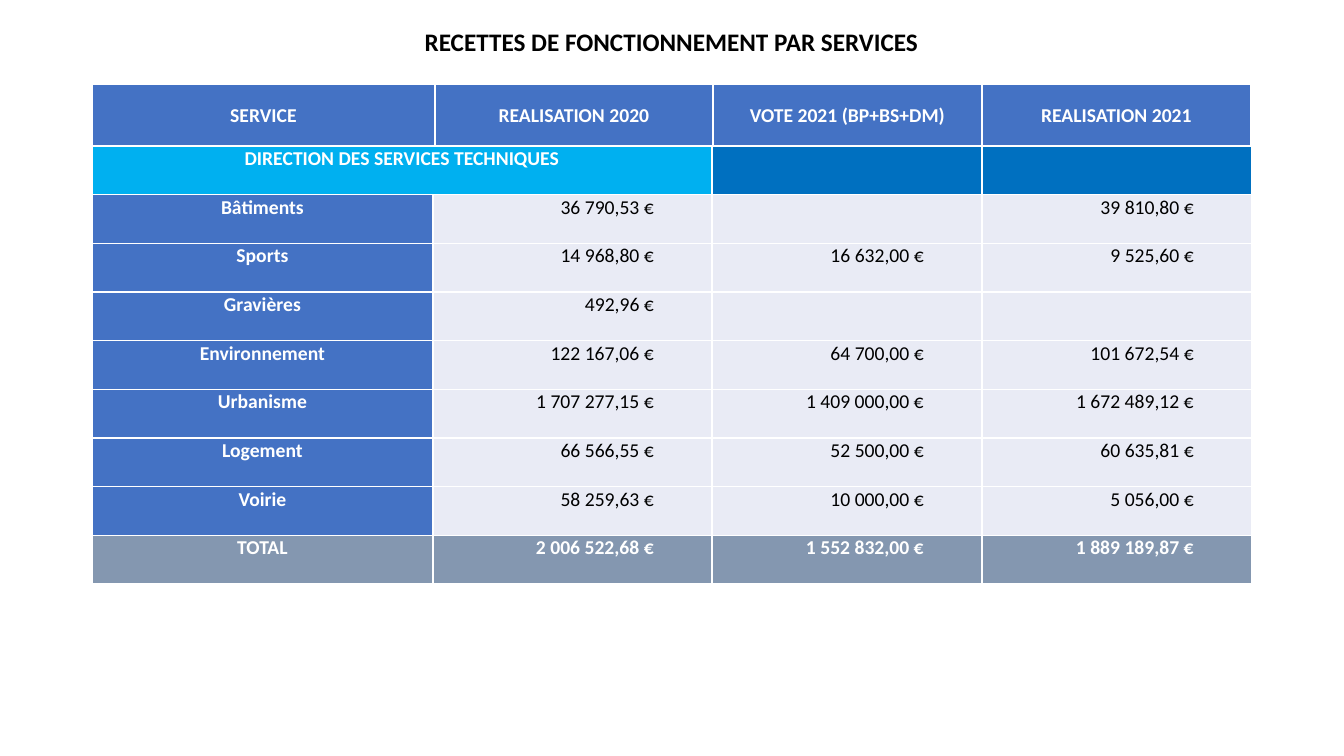
from lxml.etree import SubElement
from pptx import Presentation
from pptx.dml.color import RGBColor
from pptx.enum.text import MSO_ANCHOR as Anchor, PP_ALIGN as Align
from pptx.oxml.ns import qn
from pptx.util import Emu, Pt

EMU_PER_PX = 12192000 / 1344
COLORS = {
    "white": "FFFFFF",
    "black": "000000",
    "service": "4472C4",
    "direction": "00B0F0",
    "direction_blank": "0070C0",
    "amount": "E9EBF5",
    "total": "8497B0",
}
HEADINGS = ["SERVICE", "REALISATION 2020", "VOTE 2021 (BP+BS+DM)", "REALISATION 2021"]
RECEIPTS = [
    ["Bâtiments", "36 790,53 €", "", "39 810,80 €"],
    ["Sports", "14 968,80 €", "16 632,00 €", "9 525,60 €"],
    ["Gravières", "492,96 €", "", ""],
    ["Environnement", "122 167,06 €", "64 700,00 €", "101 672,54 €"],
    ["Urbanisme", "1 707 277,15 €", "1 409 000,00 €", "1 672 489,12 €"],
    ["Logement", "66 566,55 €", "52 500,00 €", "60 635,81 €"],
    ["Voirie", "58 259,63 €", "10 000,00 €", "5 056,00 €"],
]
TOTAL = ["TOTAL", "2 006 522,68 €", "1 552 832,00 €", "1 889 189,87 €"]


def px(length):
    return Emu(round(length * EMU_PER_PX))


class SlideBuilder:
    font = "Calibri"
    amount_inset = 58

    def __init__(self, slide):
        self.slide = slide

    def set_text(self, frame, text, size, color, bold=True, align=Align.CENTER):
        frame.text = text
        para = frame.paragraphs[0]
        para.alignment = align
        para.font.size = Pt(size)
        for span in para.runs:
            span.font.name = self.font
            span.font.size = Pt(size)
            span.font.bold = bold
            span.font.color.rgb = RGBColor.from_string(COLORS[color])

    def title(self, text, left, top, width, height):
        box = self.slide.shapes.add_textbox(px(left), px(top), px(width), px(height))
        box.text_frame.word_wrap = True
        self.set_text(box.text_frame, text, 18, "black")

    def table(self, rows, left, top, widths, height):
        frame = self.slide.shapes.add_table(
            rows, len(widths), px(left), px(top), px(sum(widths)), px(height)
        )
        for column, width in zip(frame.table.columns, widths):
            column.width = px(width)
        return frame.table

    def cell(self, cell, text, fill, color="white", bold=True, amount=False, anchor=Anchor.TOP):
        cell.margin_left = cell.margin_top = px(1)
        cell.margin_right = px(self.amount_inset if amount else 1)
        cell.margin_bottom = 0
        cell.vertical_anchor = anchor
        align = Align.RIGHT if amount else Align.CENTER
        self.set_text(cell.text_frame, text, 14, color, bold, align)
        self.borders(cell)
        cell.fill.solid()
        cell.fill.fore_color.rgb = RGBColor.from_string(COLORS[fill])

    def borders(self, cell):
        properties = cell._tc.get_or_add_tcPr()
        for side in ("a:lnL", "a:lnR", "a:lnT", "a:lnB"):
            line = SubElement(properties, qn(side), w=str(Pt(1)))
            solid = SubElement(line, qn("a:solidFill"))
            SubElement(solid, qn("a:srgbClr"), val=COLORS["white"])


def main():
    deck = Presentation()
    deck.slide_width, deck.slide_height = px(1344), px(756)
    page = SlideBuilder(deck.slides.add_slide(deck.slide_layouts[6]))

    receipts = page.table(len(RECEIPTS) + 2, 92, 146, [341, 279, 270, 270], 438)
    receipts.cell(0, 0).merge(receipts.cell(0, 1))
    for column in range(4):
        text = "" if column else "DIRECTION DES SERVICES TECHNIQUES"
        fill = "direction" if column < 2 else "direction_blank"
        page.cell(receipts.cell(0, column), text, fill)
    for row, (service, *amounts) in enumerate(RECEIPTS, 1):
        page.cell(receipts.cell(row, 0), service, "service")
        for column, amount in enumerate(amounts, 1):
            page.cell(receipts.cell(row, column), amount, "amount", "black", False, True)
    for column, text in enumerate(TOTAL):
        page.cell(receipts.cell(len(RECEIPTS) + 1, column), text, "total", amount=column > 0)

    header = page.table(1, 92, 84, [343, 278, 269, 269], 62)
    for column, heading in enumerate(HEADINGS):
        page.cell(header.cell(0, column), heading, "service", anchor=Anchor.MIDDLE)

    page.title("RECETTES DE FONCTIONNEMENT PAR SERVICES", 92, 21, 1159, 40)
    deck.save("out.pptx")


if __name__ == "__main__":
    main()
